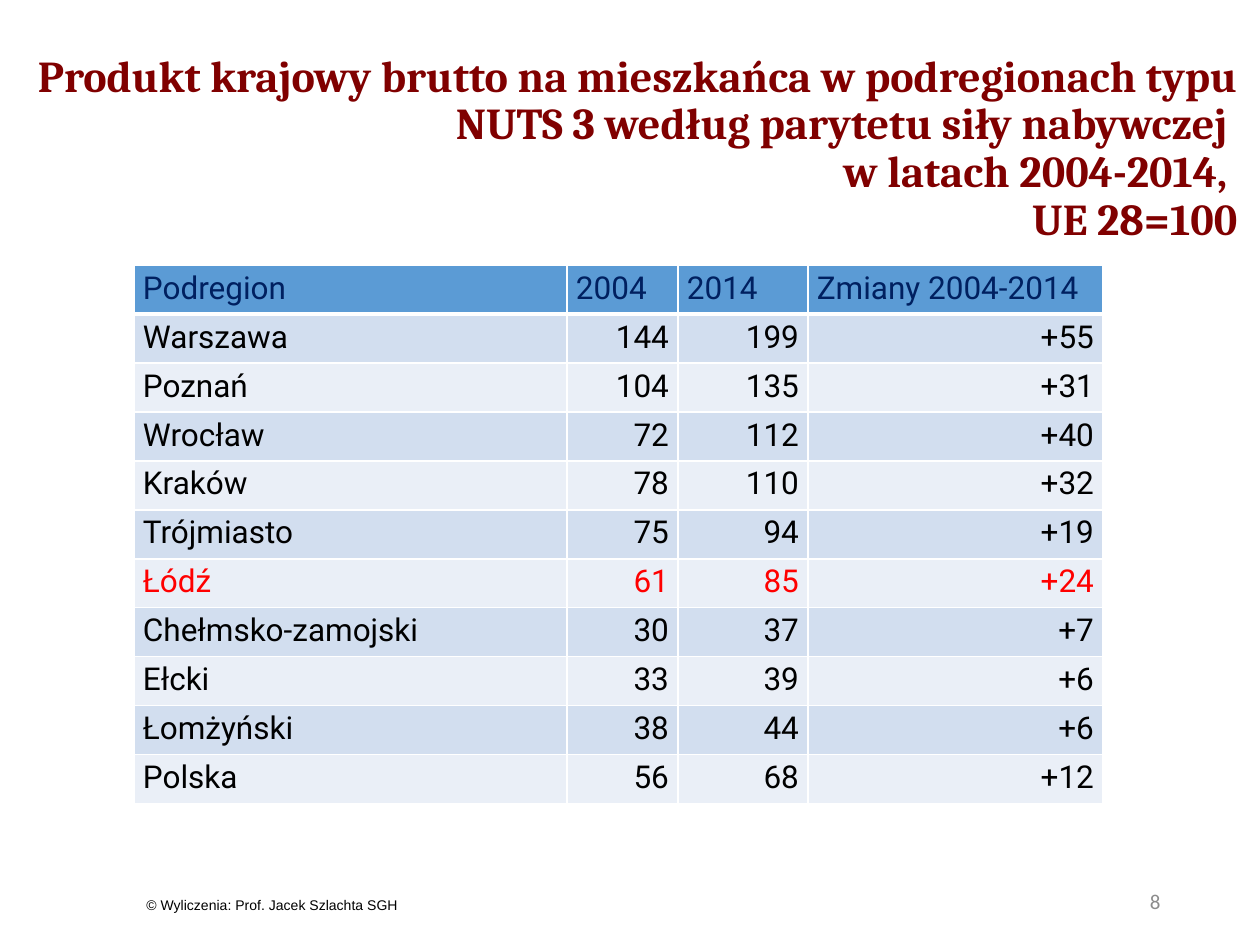
from pptx import Presentation
from pptx.dml.color import RGBColor
from pptx.enum.text import MSO_ANCHOR, MSO_AUTO_SIZE, PP_ALIGN
from pptx.oxml.ns import qn
from pptx.util import Emu, Pt
from lxml.etree import SubElement

MAROON = RGBColor(0x80, 0x00, 0x00)
NAVY = RGBColor(0x00, 0x20, 0x60)
BLUE = RGBColor(0x5B, 0x9B, 0xD5)
BAND_DARK = RGBColor(0xD2, 0xDE, 0xEF)
BAND_LIGHT = RGBColor(0xEA, 0xEF, 0xF7)
WHITE = RGBColor(0xFF, 0xFF, 0xFF)
BLACK = RGBColor(0x00, 0x00, 0x00)
RED = RGBColor(0xFF, 0x00, 0x00)
GRAY = RGBColor(0x8C, 0x8C, 0x8C)

PX_PER_INCH = 126
TITLE_LINES = [
    "Produkt krajowy brutto na mieszkańca w podregionach typu "
    "NUTS 3 według parytetu siły nabywczej ",
    "w latach 2004-2014, ",
    "UE 28=100",
]
HEADER = ["Podregion", "2004", "2014", "Zmiany 2004-2014"]
REGIONS = [
    ("Warszawa", 144, 199),
    ("Poznań", 104, 135),
    ("Wrocław", 72, 112),
    ("Kraków", 78, 110),
    ("Trójmiasto", 75, 94),
    ("Łódź", 61, 85),
    ("Chełmsko-zamojski", 30, 37),
    ("Ełcki", 33, 39),
    ("Łomżyński", 38, 44),
    ("Polska", 56, 68),
]
HIGHLIGHTED = "Łódź"
COLUMN_WIDTHS = [433, 111, 130, 295]
ROW_HEIGHT = 49


def px(length):
    return Emu(round(length * 914400 / PX_PER_INCH))


class SlideBuilder:
    def __init__(self, page):
        self.page = page

    def add_lines(self, frame, lines, font, size, color, bold=False, align=PP_ALIGN.LEFT, spacing=None):
        for index, line in enumerate(lines):
            para = frame.paragraphs[0] if index == 0 else frame.add_paragraph()
            para.alignment = align
            para.line_spacing = spacing
            span = para.add_run()
            span.text = line
            for name, value in {"name": font, "size": Pt(size), "bold": bold}.items():
                setattr(span.font, name, value)
            span.font.color.rgb = color

    def title(self, left, top, width, height, lines, **style):
        box = self.page.shapes.title
        place = {"left": left, "top": top, "width": width, "height": height}
        for name, value in place.items():
            setattr(box, name, px(value))
        frame = box.text_frame
        frame.word_wrap = True
        frame.auto_size = MSO_AUTO_SIZE.NONE
        frame.vertical_anchor = MSO_ANCHOR.MIDDLE
        self.add_lines(frame, lines, **style)

    def text(self, left, top, width, height, line, wrap=True, anchor=MSO_ANCHOR.TOP, **style):
        box = self.page.shapes.add_textbox(px(left), px(top), px(width), px(height))
        frame = box.text_frame
        frame.word_wrap = wrap
        frame.auto_size = MSO_AUTO_SIZE.NONE if wrap else MSO_AUTO_SIZE.SHAPE_TO_FIT_TEXT
        frame.vertical_anchor = anchor
        self.add_lines(frame, [line], **style)

    def cell_borders(self, cell, bottom_width):
        """Add white cell edges; call before the fill, which must follow them in the XML."""
        properties = cell._tc.get_or_add_tcPr()
        for side, width in {"L": 1, "R": 1, "T": 1, "B": bottom_width}.items():
            line = SubElement(properties, qn(f"a:ln{side}"), w=str(int(Pt(width))))
            fill = SubElement(line, qn("a:solidFill"))
            SubElement(fill, qn("a:srgbClr"), val=str(WHITE))

    def cell(self, cell, text, fill, color, align, bottom_width=1):
        margins = {"margin_left": 9, "margin_right": 9, "margin_top": 5, "margin_bottom": 5}
        for name, value in margins.items():
            setattr(cell, name, px(value))
        self.cell_borders(cell, bottom_width)
        cell.fill.solid()
        cell.fill.fore_color.rgb = fill
        self.add_lines(cell.text_frame, [text], "Roboto", 18, color, align=align)

    def table(self, left, top, header, regions):
        row_count = len(regions) + 1
        table = self.page.shapes.add_table(
            row_count, len(header), px(left), px(top),
            px(sum(COLUMN_WIDTHS)), px(ROW_HEIGHT * row_count)).table
        for column, width in zip(table.columns, COLUMN_WIDTHS):
            column.width = px(width)
        for row in table.rows:
            row.height = px(ROW_HEIGHT)
        for index, label in enumerate(header):
            self.cell(table.cell(0, index), label, BLUE, NAVY, PP_ALIGN.LEFT, bottom_width=3)
        for row, (region, before, after) in enumerate(regions, start=1):
            fill = BAND_DARK if row % 2 else BAND_LIGHT
            color = RED if region == HIGHLIGHTED else BLACK
            values = [region, str(before), str(after), f"{after - before:+d}"]
            for index, value in enumerate(values):
                align = PP_ALIGN.RIGHT if index else PP_ALIGN.LEFT
                self.cell(table.cell(row, index), value, fill, color, align)


def main():
    deck = Presentation()
    deck.slide_width, deck.slide_height = px(1260), px(945)
    builder = SlideBuilder(deck.slides.add_slide(deck.slide_layouts[5]))
    builder.title(15, 45, 1235, 209, TITLE_LINES, font="Cambria", size=25.2,
                  color=MAROON, bold=True, align=PP_ALIGN.RIGHT, spacing=0.9)
    builder.table(134, 265, HEADER, REGIONS)
    builder.text(890, 876, 283, 50, "8", anchor=MSO_ANCHOR.MIDDLE,
                 font="Calibri", size=12, color=GRAY, align=PP_ALIGN.RIGHT)
    builder.text(134, 890, 287, 30, "© Wyliczenia: Prof. Jacek Szlachta SGH", wrap=False,
                 font="Arial", size=8, color=BLACK)
    deck.save("out.pptx")


if __name__ == "__main__":
    main()
